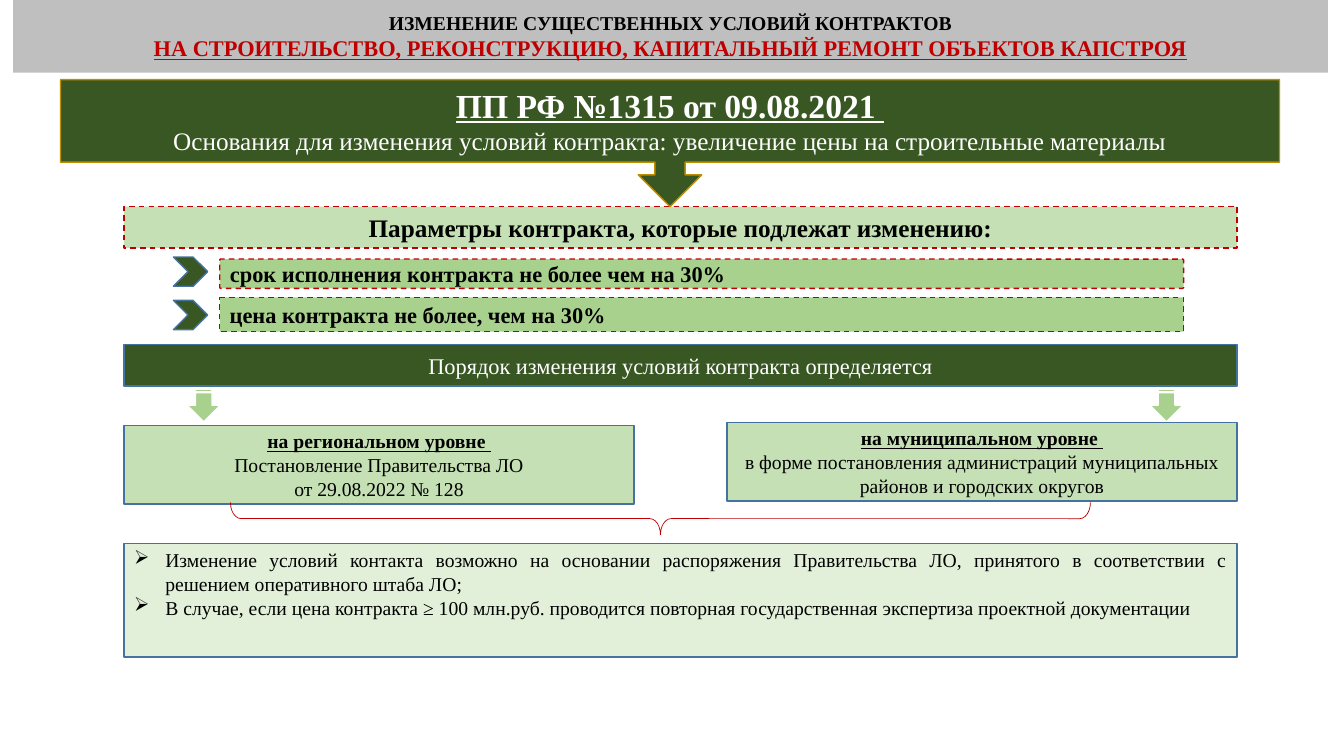
from lxml.etree import SubElement
from pptx import Presentation
from pptx.dml.color import RGBColor
from pptx.enum.dml import MSO_LINE
from pptx.enum.shapes import MSO_SHAPE
from pptx.enum.text import MSO_ANCHOR, MSO_AUTO_SIZE, PP_ALIGN
from pptx.oxml.ns import qn
from pptx.util import Pt

PX = 9144  # 100 px to the inch
FONT = "Times New Roman"
DARK, MID, LIGHT, PALE = "385723", "A9D18E", "C5E0B4", "E2F0D9"
BLUE, RED, GOLD = "43739E", "C00000", "BD8E00"
BLACK, WHITE, GREY = "000000", "FFFFFF", "BFBFBF"
hex_color = RGBColor.from_string


def dress(shape, box, fill=None, line=None, width=1, dashed=False, adj=(), turn=0):
    """Place a shape and give it its fill, outline and geometry values."""
    for side, length in zip(("left", "top", "width", "height"), box):
        setattr(shape, side, length * PX)
    shape.shadow.inherit = False
    if fill:
        shape.fill.solid()
        shape.fill.fore_color.rgb = hex_color(fill)
    else:
        shape.fill.background()
    if line:
        shape.line.color.rgb = hex_color(line)
        shape.line.width = Pt(width)
        if dashed:
            shape.line.dash_style = MSO_LINE.DASH
    else:
        shape.line.fill.background()
    for index, value in enumerate(adj):
        shape.adjustments[index] = value
    if turn:
        shape.rotation = turn
    return shape


def write(shape, lines, align=PP_ALIGN.CENTER, anchor=MSO_ANCHOR.MIDDLE):
    """Fill a shape with lines of (text, size, colour, bold, underline)."""
    frame = shape.text_frame
    frame.word_wrap = True
    frame.auto_size = MSO_AUTO_SIZE.NONE
    frame.vertical_anchor = anchor
    for index, (text, size, color, bold, underline) in enumerate(lines):
        paragraph = frame.add_paragraph() if index else frame.paragraphs[0]
        paragraph.alignment = align
        paragraph.space_before = Pt(0)
        run = paragraph.add_run()
        run.text = text
        look = {"name": FONT, "size": Pt(size), "bold": bold, "underline": underline}
        for key, value in look.items():
            setattr(run.font, key, value)
        run.font.color.rgb = hex_color(color)


deck = Presentation()
deck.slide_width, deck.slide_height = 1333 * PX, 750 * PX
slide = deck.slides.add_slide(deck.slide_layouts[1])
new_shape = slide.shapes.add_shape

# Header and conditions
header = dress(slide.shapes.title, (13, 0, 1304, 72), GREY)
write(header, [
    ("ИЗМЕНЕНИЕ СУЩЕСТВЕННЫХ УСЛОВИЙ КОНТРАКТОВ", 14, BLACK, True, False),
    ("НА СТРОИТЕЛЬСТВО, РЕКОНСТРУКЦИЮ, КАПИТАЛЬНЫЙ РЕМОНТ ОБЪЕКТОВ КАПСТРОЯ",
     16, RED, True, True),
])

conditions = dress(slide.placeholders[1], (123, 539, 1104, 113), PALE, BLUE)
write(conditions, [
    ("Изменение условий контакта возможно на основании распоряжения Правительства ЛО, "
     "принятого в соответствии с решением оперативного штаба ЛО;", 14, BLACK, False, False),
    ("В случае, если цена контракта ≥ 100 млн.руб. проводится повторная государственная "
     "экспертиза проектной документации", 14, BLACK, False, False),
], PP_ALIGN.JUSTIFY, MSO_ANCHOR.TOP)
for condition in conditions.text_frame.paragraphs:
    properties = condition._p.get_or_add_pPr()
    properties.set("marL", str(31 * PX))
    properties.set("indent", str(-31 * PX))
    SubElement(properties, qn("a:buFont"), typeface="Wingdings").set("charset", "2")
    SubElement(properties, qn("a:buChar"), char="Ø")

# Contract parameters that change
parameters = [
    ("срок исполнения контракта не более чем на 30%", 255, 257, 29, 0.036),
    ("цена контракта не более, чем на 30%", 298, 295, 34, 0),
]
for text, chevron_top, bar_top, bar_height, corner in parameters:
    dress(new_shape(MSO_SHAPE.CHEVRON, 0, 0, 0, 0), (172, chevron_top, 34, 29), DARK, BLUE)
    bar = dress(new_shape(MSO_SHAPE.ROUNDED_RECTANGLE, 0, 0, 0, 0),
                (218, bar_top, 956, bar_height), MID, RED, dashed=True, adj=[corner])
    write(bar, [(text, 16, BLACK, True, False)], PP_ALIGN.LEFT)

parameters_heading = dress(new_shape(MSO_SHAPE.RECTANGLE, 0, 0, 0, 0),
                           (123, 205, 1104, 41), LIGHT, RED, dashed=True)
write(parameters_heading,
      [("Параметры контракта, которые подлежат изменению:", 18, BLACK, True, False)])

resolution = dress(new_shape(MSO_SHAPE.DOWN_ARROW_CALLOUT, 0, 0, 0, 0),
                   (60, 79, 1209, 126), DARK, GOLD, adj=[0.239, 0.25, 0.25, 0.65])
write(resolution, [
    ("ПП РФ №1315 от 09.08.2021 ", 24, WHITE, True, True),
    ("Основания для изменения условий контракта: увеличение цены на строительные материалы",
     18, WHITE, False, False),
], anchor=MSO_ANCHOR.TOP)

# Procedure at the two levels
procedure = dress(new_shape(MSO_SHAPE.ROUNDED_RECTANGLE, 0, 0, 0, 0),
                  (123, 342, 1104, 41), DARK, BLUE, adj=[0])
write(procedure,
      [("Порядок изменения условий контракта определяется", 16, WHITE, False, False)])

levels = [
    (123, 422, 185, "на региональном уровне ",
     ["Постановление Правительства ЛО", "от 29.08.2022 № 128"]),
    (721, 419, 1140, "на муниципальном уровне ",
     ["в форме постановления администраций муниципальных районов и городских округов"]),
]
for left, top, arrow_left, level, details in levels:
    dress(new_shape(MSO_SHAPE.STRIPED_RIGHT_ARROW, 0, 0, 0, 0),
          (arrow_left, 385, 34, 33), MID, WHITE, turn=90)
    card = dress(new_shape(MSO_SHAPE.ROUNDED_RECTANGLE, 0, 0, 0, 0),
                 (left, top, 506, 78), LIGHT, BLUE, adj=[0])
    write(card, [(level, 14, BLACK, True, True)]
          + [(detail, 14, BLACK, False, False) for detail in details])

dress(new_shape(MSO_SHAPE.RIGHT_BRACE, 0, 0, 0, 0), (639, 88, 32, 853),
      line=RED, width=0.5, adj=[0.33, 0.5], turn=90)

deck.save("out.pptx")
